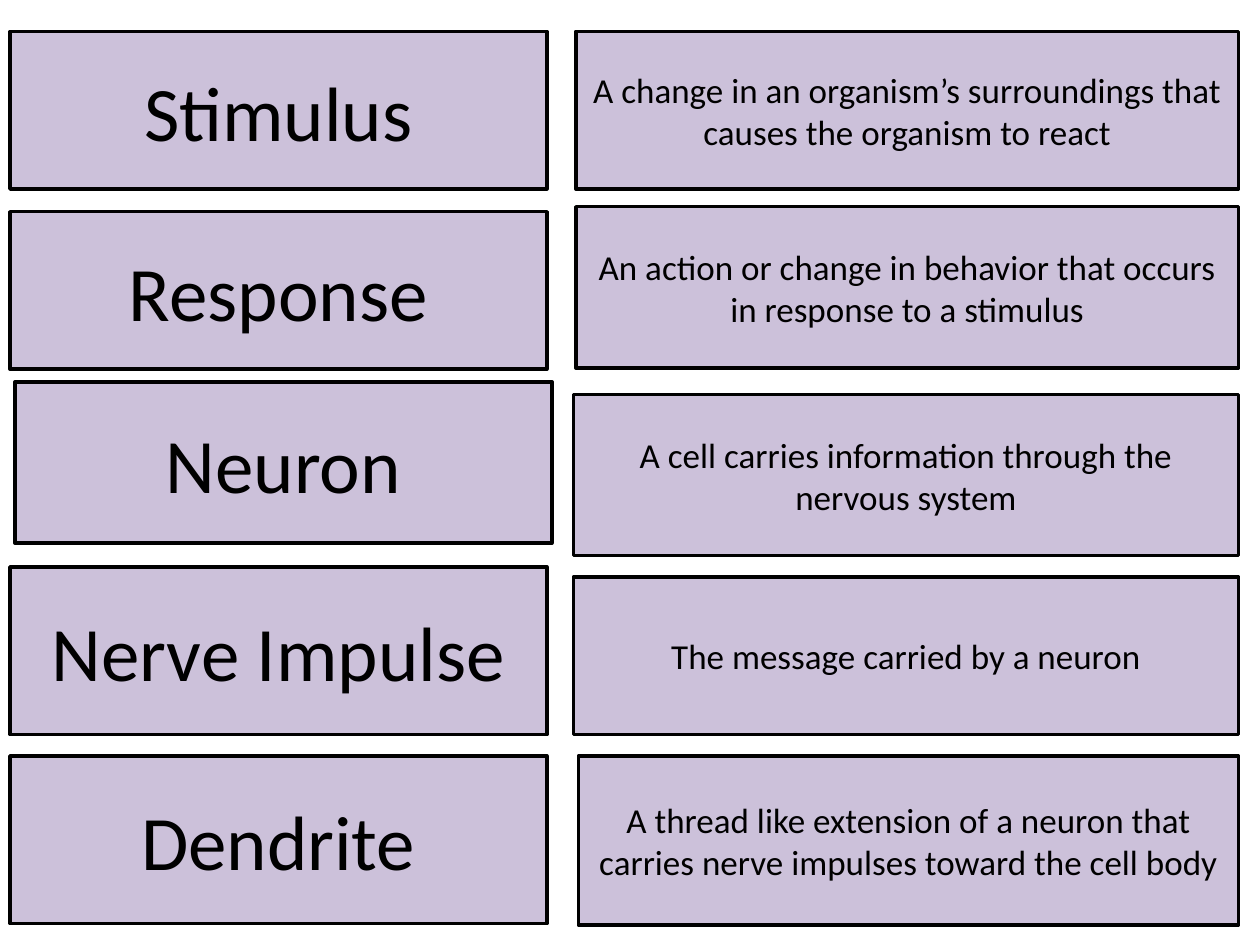
from pptx import Presentation
from pptx.dml.color import RGBColor
from pptx.enum.shapes import MSO_SHAPE
from pptx.enum.text import MSO_ANCHOR, PP_ALIGN
from pptx.util import Inches, Pt

LILAC = RGBColor(0xCC, 0xC1, 0xDA)
BLACK = RGBColor(0, 0, 0)
TERM_WIDTH = 4.26
RIGHT_EDGE = 9.83

# Each card: text, left, top, height
TERMS = [
    ("Stimulus", 0.08, 0.25, 1.25),
    ("Response", 0.08, 1.68, 1.25),
    ("Neuron", 0.12, 3.03, 1.28),
    ("Nerve Impulse", 0.08, 4.5, 1.33),
    ("Dendrite", 0.08, 6, 1.33),
]
DEFINITIONS = [
    ("A change in an organism’s surroundings that causes the organism to react",
     4.57, 0.25, 1.25),
    ("An action or change in behavior that occurs in response to a stimulus",
     4.57, 1.64, 1.28),
    ("A cell carries information through the nervous system", 4.55, 3.13, 1.28),
    ("The message carried by a neuron", 4.55, 4.58, 1.25),
    ("A thread like extension of a neuron that carries nerve impulses toward the cell body",
     4.59, 6, 1.34),
]

deck = Presentation()
deck.slide_width = Inches(10)
deck.slide_height = Inches(7.5)
page = deck.slides.add_slide(deck.slide_layouts[6])


def add_card(text, left, top, width, height, size):
    box = page.shapes.add_shape(MSO_SHAPE.FLOWCHART_PROCESS, Inches(left),
                                Inches(top), Inches(width), Inches(height))
    box.shadow.inherit = False
    box.fill.solid()
    box.fill.fore_color.rgb = LILAC
    box.line.color.rgb = BLACK
    box.line.width = Pt(2)
    frame = box.text_frame
    frame.word_wrap = True
    frame.vertical_anchor = MSO_ANCHOR.MIDDLE
    para = frame.paragraphs[0]
    para.alignment = PP_ALIGN.CENTER
    span = para.add_run()
    span.text = text
    span.font.name = "Calibri"
    span.font.size = Pt(size)
    span.font.color.rgb = BLACK


for term, definition in zip(TERMS, DEFINITIONS):
    text, left, top, height = term
    add_card(text, left, top, TERM_WIDTH, height, 44)
    text, left, top, height = definition
    add_card(text, left, top, RIGHT_EDGE - left, height, 20)

deck.save("out.pptx")
